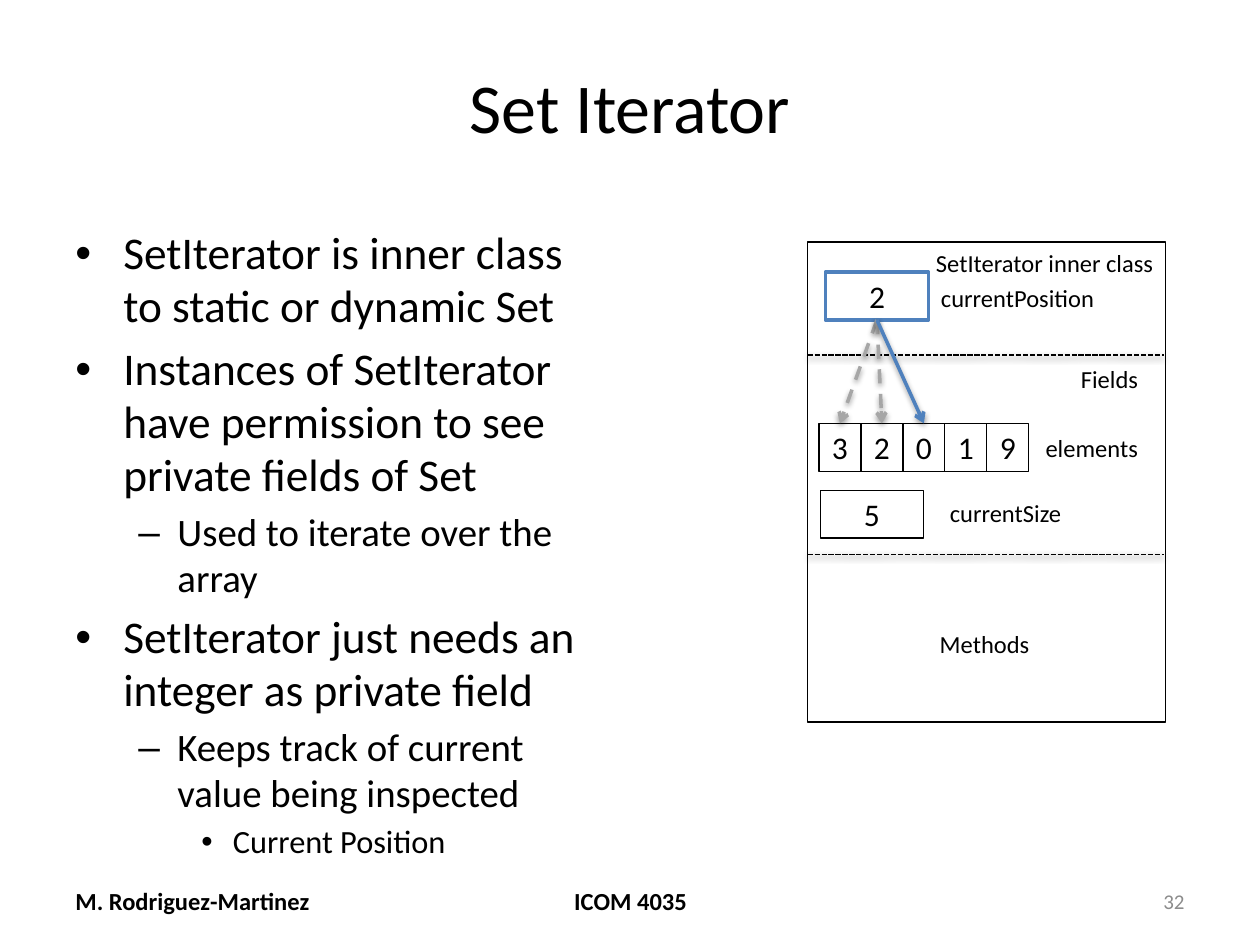
from pptx import Presentation
from pptx.dml.color import RGBColor
from pptx.enum.dml import MSO_LINE
from pptx.enum.shapes import MSO_CONNECTOR, MSO_SHAPE
from pptx.enum.text import MSO_ANCHOR, MSO_AUTO_SIZE, PP_ALIGN
from pptx.oxml import parse_xml
from pptx.oxml.ns import nsdecls
from pptx.util import Inches, Pt

COLS, ROWS = 100, 75
INK = {"black": "000000", "white": "FFFFFF", "blue": "4F81BD",
       "gray": "A6A6A6", "dim": "8C8C8C"}
LEVELS = [  # bullet, size, left margin, hanging indent
    ("•", 25.9, 0.38, 0.38),
    ("–", 22.2, 0.81, 0.31),
    ("•", 18.5, 1.25, 0.25),
]
BODY = [
    (0, "SetIterator is inner class to static or dynamic Set"),
    (0, "Instances of SetIterator have permission to see private fields of Set"),
    (1, "Used to iterate over the array"),
    (0, "SetIterator just needs an integer as private field"),
    (1, "Keeps track of current value being inspected"),
    (2, "Current Position"),
]
LABELS = [
    ("Fields", 84.8, 28.4, 6.6),
    ("elements", 82, 33.9, 9.4),
    ("currentSize", 74.4, 39, 11),
    ("Methods", 73.6, 49.4, 9.2),
    ("currentPosition", 73.7, 22, 14.3),
    ("SetIterator inner class", 73.3, 19.2, 19.5),
]
SHADOW = (f'<a:effectLst {nsdecls("a")}><a:outerShdw blurRad="40000" dist="20000" '
          'dir="5400000" rotWithShape="0"><a:srgbClr val="000000">'
          '<a:alpha val="38000"/></a:srgbClr></a:outerShdw></a:effectLst>')
ARROW = f'<a:tailEnd {nsdecls("a")} type="arrow"/>'


def tint(name):
    return RGBColor.from_string(INK[name])


def apply(item, **look):
    for key, value in look.items():
        setattr(item, key, value)


class Board:
    """Draws on one slide, with lengths in columns and rows."""
    face = "Calibri"

    def __init__(self, deck):
        self.wide, self.high = deck.slide_width, deck.slide_height
        self.slide = deck.slides.add_slide(deck.slide_layouts[5])
        self.shapes = self.slide.shapes

    def spot(self, x, y):
        return round(x * self.wide / COLS), round(y * self.high / ROWS)

    def area(self, x, y, w, h):
        return *self.spot(x, y), *self.spot(w, h)

    def label(self, para, text, size, color="black", bold=False, align=PP_ALIGN.LEFT):
        run = para.add_run()
        run.text = text
        para.alignment = align
        apply(run.font, name=self.face, size=Pt(size), bold=bold)
        run.font.color.rgb = tint(color)

    def title(self, text, box):
        head = self.shapes.title
        apply(head, **dict(zip(("left", "top", "width", "height"), self.area(*box))))
        apply(head.text_frame, vertical_anchor=MSO_ANCHOR.MIDDLE,
              auto_size=MSO_AUTO_SIZE.NONE)
        self.label(head.text_frame.paragraphs[0], text, 40, align=PP_ALIGN.CENTER)

    def text(self, text, box, size, wrap=True, anchor=MSO_ANCHOR.TOP, **look):
        frame = self.shapes.add_textbox(*self.area(*box)).text_frame
        apply(frame, word_wrap=wrap, vertical_anchor=anchor)
        self.label(frame.paragraphs[0], text, size, **look)

    def bullets(self, items, box):
        frame = self.shapes.add_textbox(*self.area(*box)).text_frame
        frame.word_wrap = True
        for i, (level, text) in enumerate(items):
            mark, size, left, hang = LEVELS[level]
            para = frame.add_paragraph() if i else frame.paragraphs[0]
            apply(para, level=level, space_before=Pt(size * 0.2), line_spacing=0.98)
            self.label(para, text, size)
            props = para._p.get_or_add_pPr()
            props.set("marL", str(Inches(left)))
            props.set("indent", str(-Inches(hang)))
            props.append(parse_xml(f'<a:buFont {nsdecls("a")} typeface="Arial"/>'))
            props.append(parse_xml(f'<a:buChar {nsdecls("a")} char="{mark}"/>'))

    def rect(self, box, text="", color="black", width=0.75):
        item = self.shapes.add_shape(MSO_SHAPE.RECTANGLE, *self.area(*box))
        item.shadow.inherit = False
        item.fill.solid()
        item.fill.fore_color.rgb = tint("white")
        item.line.color.rgb = tint(color)
        item.line.width = Pt(width)
        if text:
            item.text_frame.vertical_anchor = MSO_ANCHOR.MIDDLE
            self.label(item.text_frame.paragraphs[0], text, 18, align=PP_ALIGN.CENTER)

    def line(self, start, end, color="black", width=1, dash=None, arrow=False):
        item = self.shapes.add_connector(
            MSO_CONNECTOR.STRAIGHT, *self.spot(*start), *self.spot(*end))
        item.line.color.rgb = tint(color)
        apply(item.line, width=Pt(width), dash_style=dash)
        if arrow:
            item.line._get_or_add_ln().append(parse_xml(ARROW))
        item._element.spPr.append(parse_xml(SHADOW))


def main():
    deck = Presentation()
    deck.slide_width, deck.slide_height = Inches(10), Inches(7.5)
    board = Board(deck)
    board.title("Set Iterator", (5, 3, 90, 10.7))
    board.bullets(BODY, (5, 17.5, 44.2, 50.2))

    feet = [
        ("M. Rodriguez-Martinez", 5, 23.3, 14, "black", True, PP_ALIGN.LEFT),
        ("ICOM 4035", 34.2, 31.7, 14, "black", True, PP_ALIGN.CENTER),
        ("32", 71.7, 23.3, 12, "dim", False, PP_ALIGN.RIGHT),
    ]
    for text, x, w, size, color, bold, align in feet:
        board.text(text, (x, 69.5, w, 4), size, anchor=MSO_ANCHOR.MIDDLE,
                   color=color, bold=bold, align=align)

    # Class box, its array and its two counters
    left, right, top = 64.1, 92.4, 33.6
    board.rect((left, 19.2, 28.4, 38.1))
    board.rect((65.1, 38.9, 8.2, 3.8), "5")
    cell = 3.33
    for i, value in enumerate("32019"):
        board.rect((65 + i * cell, top, cell, 3.8), value)
    board.rect((65.5, 21.6, 8.2, 3.8), "2", "blue", 2)
    for text, x, y, w in LABELS:
        board.text(text, (x, y, w, 3.4), 14, wrap=False)

    for y in (28.2, 44):
        board.line((left, y), (right, y), dash=MSO_LINE.SQUARE_DOT)
    steps = [("gray", MSO_LINE.DASH), ("gray", MSO_LINE.DASH), ("blue", None)]
    for i, (color, dash) in enumerate(steps):
        board.line((69.6, 25.4), (65 + (i + 0.5) * cell, top), color, 2, dash, True)

    deck.save("out.pptx")


if __name__ == "__main__":
    main()
